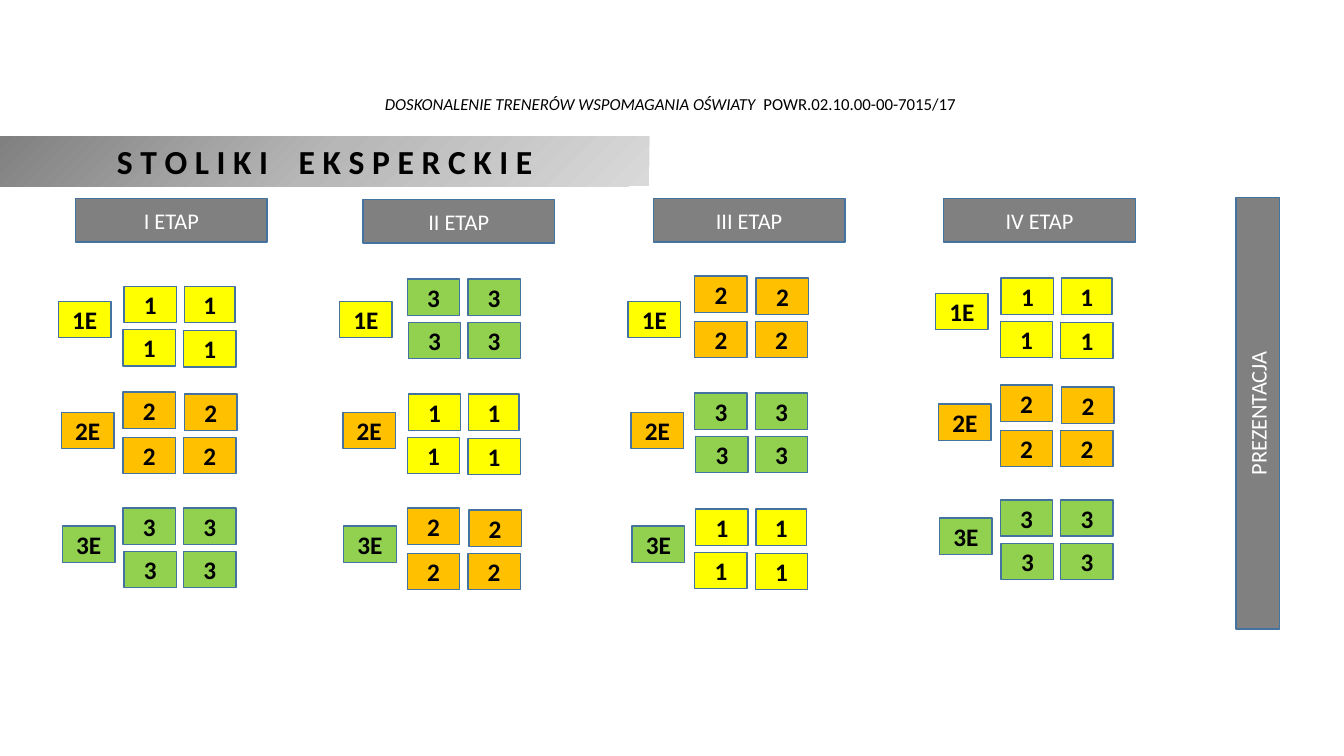
from collections import namedtuple
from dataclasses import dataclass

from lxml.etree import SubElement
from pptx import Presentation
from pptx.dml.color import RGBColor
from pptx.enum.shapes import MSO_SHAPE
from pptx.enum.text import MSO_ANCHOR, PP_ALIGN
from pptx.oxml.ns import qn
from pptx.util import Inches, Pt

# Boxes are measured in grid cells of a tenth of an inch
CELL = Inches(0.1)
Box = namedtuple("Box", "left top width height")


@dataclass(frozen=True)
class Theme:
    font: str = "Calibri"
    ink: str = "000000"
    white: str = "FFFFFF"
    bar: str = "808080"
    outline: str = "43739E"
    fade: tuple = ((0, "808080"), (50, "B7B7B7"), (100, "D9D9D9"))
    teams: tuple = ("FFFF00", "FFC000", "92D050")
    title: int = 24
    card: int = 18
    stage: int = 16
    header: int = 12


THEME = Theme()
CARD = (5.2, 3.6)
BAR_HEIGHT = 4.3

# Card offsets inside a table: column, row and width, for each team
SEATS = {
    1: ((0.1, 0, 5.2), (6.1, 0, 5), (0, 4.3, 5.2), (6, 4.4, 5.2)),
    2: ((0, 0, 5.2), (6.1, 0.2, 5.2), (0, 4.5, 5.2), (6, 4.5, 5.2)),
    3: ((0, 0, 5.2), (6, 0, 5.2), (0.1, 4.3, 5.2), (6, 4.3, 5.2)),
}
# Expert label offsets: column and row
EXPERTS = ((0, 0), (0.3, 11), (0.4, 22.3))

# Name, box, expert corner, column of the tables, (team, row) of each table
STAGES = (
    ("I ETAP", Box(7.5, 19.7, 19, 40), (-1.7, 10.2), 4.7,
     ((1, 8.7), (2, 19.2), (3, 30.7))),
    ("II ETAP", Box(36, 19.8, 19, 40), (-2.3, 10.1), 4.4,
     ((3, 7.9), (1, 19.3), (2, 30.6))),
    ("III ETAP", Box(64.8, 19.7, 19, 40), (-2.5, 10.2), 4.1,
     ((2, 7.7), (3, 19.3), (1, 30.8))),
    ("IV ETAP", Box(93.6, 19.7, 19, 40), (-0.8, 9.4), 5.6,
     ((1, 7.9), (2, 18.5), (3, 29.9))),
)


def cells(box):
    return [round(length * CELL) for length in box]


def write(shape, parts, size, color, bold=False):
    """Fill one centred line; a part is its text, italic flag and spacing."""
    frame = shape.text_frame
    frame.word_wrap = True
    frame.vertical_anchor = MSO_ANCHOR.MIDDLE
    para = frame.paragraphs[0]
    para.alignment = PP_ALIGN.CENTER
    for text, italic, spacing in parts:
        span = para.add_run()
        span.text = text
        font = span.font
        font.name, font.size = THEME.font, Pt(size)
        font.bold, font.italic = bold, italic
        font.color.rgb = RGBColor.from_string(color)
        if spacing:
            span.font._element.set("spc", str(spacing))


def add_box(page, box, fill=None):
    shape = page.shapes.add_shape(MSO_SHAPE.RECTANGLE, *cells(box))
    shape.shadow.inherit = False
    if fill:
        shape.fill.solid()
        shape.fill.fore_color.rgb = RGBColor.from_string(fill)
        shape.line.color.rgb = RGBColor.from_string(THEME.outline)
        shape.line.width = Pt(1)
    return shape


def add_card(page, box, text, team):
    card = add_box(page, box, THEME.teams[team - 1])
    write(card, [(text, False, 0)], THEME.card, THEME.ink, bold=True)


def add_bar(page, box, text):
    bar = add_box(page, box, THEME.bar)
    write(bar, [(text, False, 0)], THEME.stage, THEME.white)
    return bar


def add_header(page, box):
    header = page.shapes.add_textbox(*cells(box))
    parts = (("DOSKONALENIE TRENERÓW WSPOMAGANIA OŚWIATY", True, 0),
             (" ", True, 270),
             ("POWR.02.10.00-00-7015/17", False, 0))
    write(header, parts, THEME.header, THEME.ink)


def add_title(page, box):
    title = add_box(page, box)
    title.line.fill.background()
    # Radial fade from the top left corner
    title.fill.gradient()
    gradient = title.fill._xPr.find(qn("a:gradFill"))
    for child in list(gradient):
        gradient.remove(child)
    stops = SubElement(gradient, qn("a:gsLst"))
    for share, color in THEME.fade:
        stop = SubElement(stops, qn("a:gs"), pos=str(share * 1000))
        SubElement(stop, qn("a:srgbClr"), val=color)
    circle = SubElement(gradient, qn("a:path"))
    circle.set("path", "circle")
    SubElement(circle, qn("a:fillToRect"), r="100000", b="100000")
    parts = (("S T O L I K I", False, 0), (" ", False, 1630),
             ("E K S P E R C K I E", False, 0))
    write(title, parts, THEME.title, THEME.ink, bold=True)


def add_table_cards(page, left, top, team):
    for column, row, width in SEATS[team]:
        add_card(page, Box(left + column, top + row, width, CARD[1]),
                 str(team), team)


def add_stage(page, box, name, corner, tables_column, tables):
    add_bar(page, box._replace(height=BAR_HEIGHT), name)
    for team, (column, row) in enumerate(EXPERTS, 1):
        add_card(page, Box(box.left + corner[0] + column,
                           box.top + corner[1] + row, *CARD),
                 f"{team}E", team)
    for team, row in tables:
        add_table_cards(page, box.left + tables_column, box.top + row, team)


def add_presentation_bar(page, box):
    # The bar lies flat around the centre of its box, then turns upright
    middle_x, middle_y = box.left + box.width / 2, box.top + box.height / 2
    flat = Box(middle_x - box.height / 2, middle_y - box.width / 2,
               box.height, box.width)
    add_bar(page, flat, "PREZENTACJA").rotation = 270


def main():
    deck = Presentation()
    deck.slide_width, deck.slide_height = Inches(13.33), Inches(7.5)
    page = deck.slides.add_slide(deck.slide_layouts[6])
    add_header(page, Box(9.2, 8.7, 114.6, 3.3))
    for name, box, corner, tables_column, tables in STAGES:
        add_stage(page, box, name, corner, tables_column, tables)
    add_presentation_bar(page, Box(122.6, 19.6, BAR_HEIGHT, 42.8))
    add_title(page, Box(0, 13.5, 64.4, 5))
    deck.save("out.pptx")


if __name__ == "__main__":
    main()
